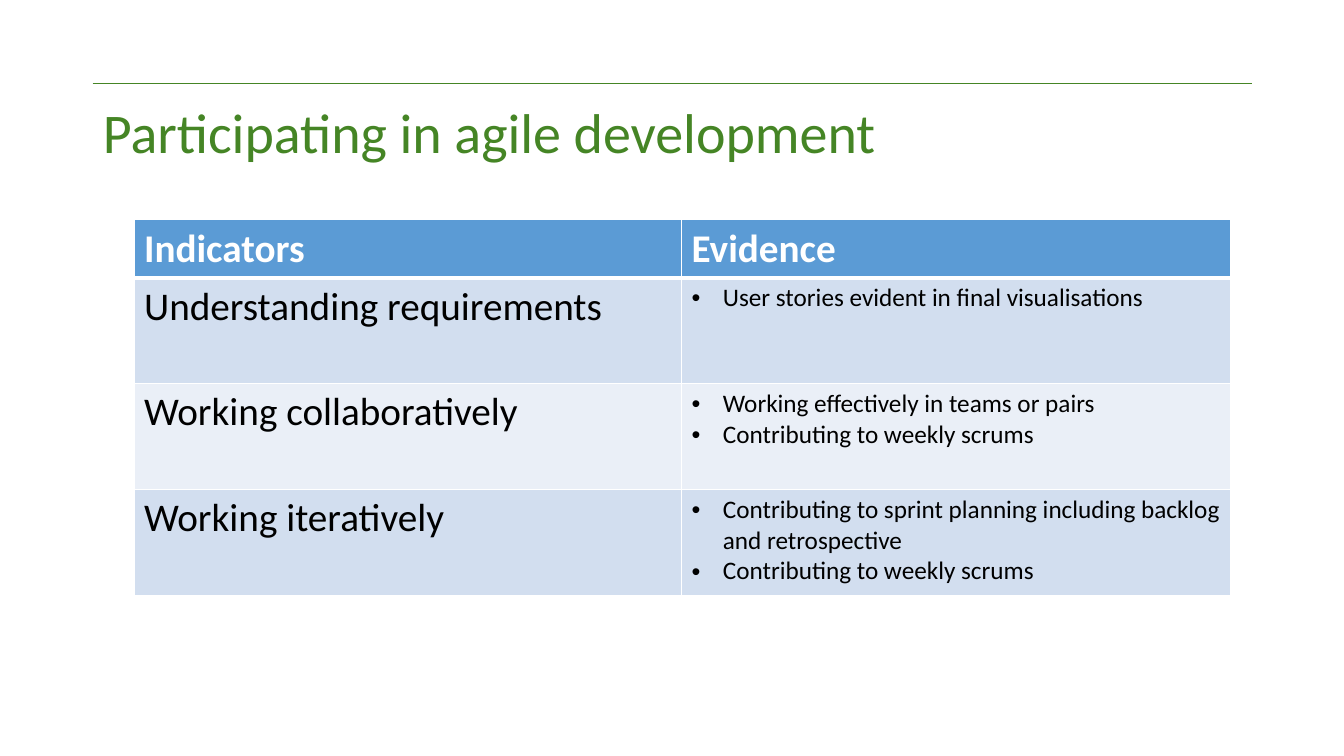
from lxml.etree import SubElement
from pptx import Presentation
from pptx.dml.color import RGBColor
from pptx.enum.shapes import MSO_CONNECTOR
from pptx.enum.text import MSO_ANCHOR, MSO_AUTO_SIZE, PP_ALIGN
from pptx.oxml.ns import qn
from pptx.util import Inches, Pt

GREEN, WHITE, BLACK = "458525", "FFFFFF", "000000"
HEADER_FILL, BAND_FILLS = "5B9BD5", ["D2DEEF", "EAEFF7"]


def color(hex_string):
    return RGBColor.from_string(hex_string)


def write(text_frame, text, size, ink, bold=False, bullet=False, line_spacing=None):
    for index, line in enumerate(text.split("\n")):
        paragraph = text_frame.add_paragraph() if index else text_frame.paragraphs[0]
        paragraph.alignment = PP_ALIGN.LEFT
        paragraph.line_spacing = line_spacing
        if bullet:
            properties = paragraph._p.get_or_add_pPr()
            properties.set("marL", str(Inches(0.31)))
            properties.set("indent", str(-Inches(0.31)))
            SubElement(properties, qn("a:buFont"), typeface="Arial")
            SubElement(properties, qn("a:buChar"), char="•")
        run = paragraph.add_run()
        run.text = line
        run.font.name = "Calibri"
        run.font.size = Pt(size)
        run.font.bold = bold
        run.font.color.rgb = color(ink)


presentation = Presentation()
presentation.slide_width = Inches(13.33)
presentation.slide_height = Inches(7.5)
slide = presentation.slides.add_slide(presentation.slide_layouts[5])

left, top, width = Inches(0.92), Inches(0.83), Inches(11.5)
rule = slide.shapes.add_connector(MSO_CONNECTOR.STRAIGHT, left, top, left + width, top)
rule.line.color.rgb = color(GREEN)
rule.line.width = Pt(0.5)
SubElement(rule._element.spPr, qn("a:effectLst"))

title = slide.shapes.title
title.left, title.top, title.width, title.height = left, top, width, Inches(1.02)
title.text_frame.auto_size = MSO_AUTO_SIZE.NONE
title.text_frame.vertical_anchor = MSO_ANCHOR.MIDDLE
write(title.text_frame, "Participating in agile development", 40, GREEN, line_spacing=0.9)

rows = [
    ("Indicators", "Evidence"),
    ("Understanding requirements", "User stories evident in final visualisations"),
    ("Working collaboratively",
     "Working effectively in teams or pairs\nContributing to weekly scrums"),
    ("Working iteratively",
     "Contributing to sprint planning including backlog and retrospective\n"
     "Contributing to weekly scrums"),
]
header_height, body_height = Inches(0.57), Inches(1.05)
table = slide.shapes.add_table(
    len(rows), 2, Inches(1.33), Inches(2.18), Inches(10.88),
    header_height + body_height * (len(rows) - 1)).table
table.columns[0].width = Inches(5.43)
table.columns[1].width = Inches(5.45)

for row_index, texts in enumerate(rows):
    is_header = row_index == 0
    table.rows[row_index].height = header_height if is_header else body_height
    for column_index, text in enumerate(texts):
        cell = table.cell(row_index, column_index)
        cell_properties = cell._tc.get_or_add_tcPr()
        for side in ("L", "R", "T", "B"):
            heavy = (side == "B" and row_index == 0) or (side == "T" and row_index == 1)
            border = SubElement(cell_properties, qn("a:ln" + side), w=str(Pt(3 if heavy else 1)))
            border_fill = SubElement(border, qn("a:solidFill"))
            SubElement(border_fill, qn("a:srgbClr"), val=WHITE)
        cell.fill.solid()
        cell.fill.fore_color.rgb = color(
            HEADER_FILL if is_header else BAND_FILLS[(row_index - 1) % 2])
        is_evidence = column_index == 1 and not is_header
        write(cell.text_frame, text, 18 if is_evidence else 28,
              WHITE if is_header else BLACK, bold=is_header, bullet=is_evidence)

presentation.save("out.pptx")
